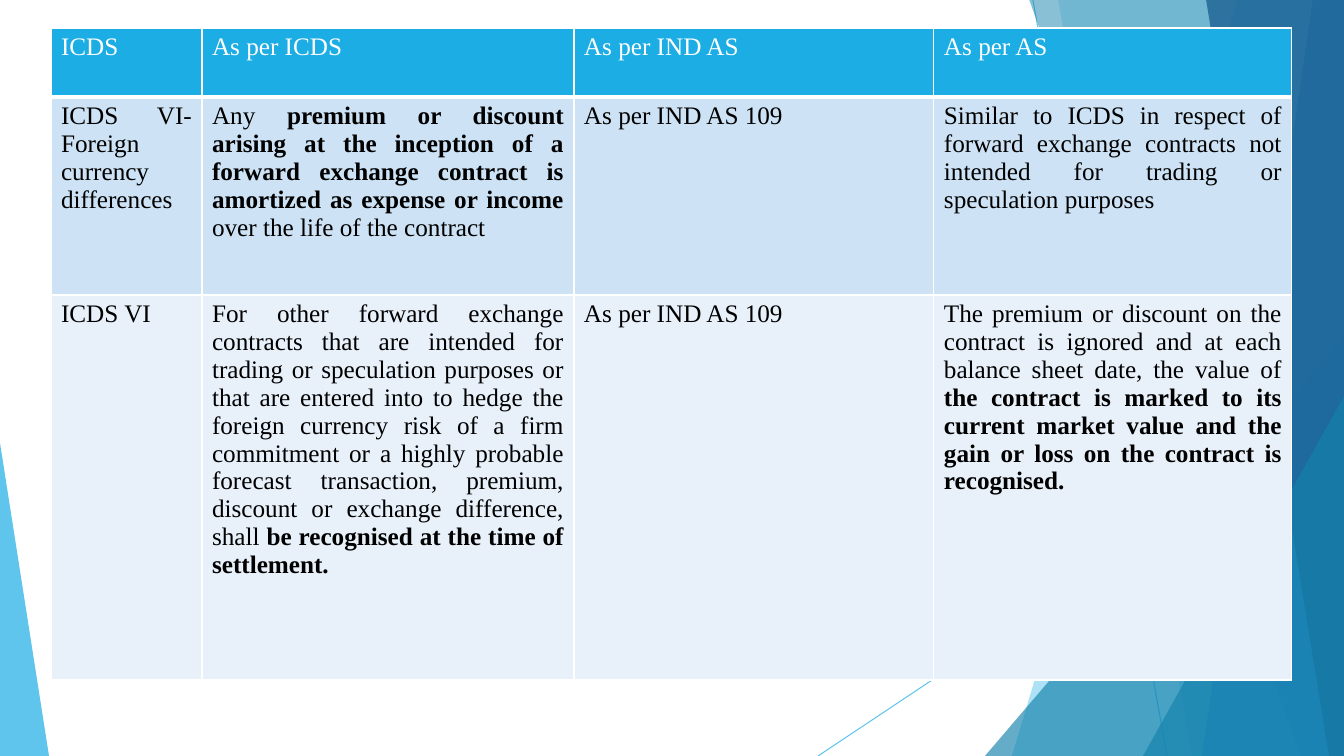
from lxml import etree
from pptx import Presentation, util as u
from pptx.dml.color import RGBColor
from pptx.enum import shapes, text
from pptx.oxml.ns import qn

PX = 914400 / 100.8
WIDTH, HEIGHT = 1344, 756
COLORS = {
    "sky": "1CADE4", "teal": "1482AC", "blue": "2683C6", "navy": "1D6294",
    "band": "CDE3F5", "pale": "E8F1FA", "white": "FFFFFF", "black": "000000",
}


def px(length):
    return u.Emu(round(length * PX))


def color(name):
    return RGBColor.from_string(COLORS[name])


def write(paragraph, words, size=18, font="Times New Roman", ink="black",
          align=text.PP_ALIGN.JUSTIFY):
    """Fill a paragraph; words between ** marks are bold."""
    paragraph.alignment = align
    for index, part in enumerate(words.split("**")):
        if part:
            run = paragraph.add_run()
            run.text = part
            run.font.name, run.font.size = font, u.Pt(size)
            run.font.bold = index % 2 == 1
            run.font.color.rgb = color(ink)


def set_alpha(fill_parent, percent):
    rgb = next(fill_parent.iter(qn("a:srgbClr")))
    etree.SubElement(rgb, qn("a:alpha"), val=str(percent * 1000))


class Deck:
    def __init__(self):
        self.prs = Presentation()
        self.prs.slide_width, self.prs.slide_height = px(WIDTH), px(HEIGHT)
        self.slide = self.prs.slides.add_slide(self.prs.slide_layouts[6])

    def line(self, x1, y1, x2, y2, ink="sky", alpha=70):
        connector = self.slide.shapes.add_connector(
            shapes.MSO_CONNECTOR.STRAIGHT, px(x1), px(y1), px(x2), px(y2))
        connector.line.width = u.Pt(0.75)
        connector.line.color.rgb = color(ink)
        properties = connector._element.spPr
        set_alpha(properties, alpha)
        etree.SubElement(properties, qn("a:effectLst"))

    def paint(self, shape, ink, alpha):
        shape.shadow.inherit = False
        shape.fill.solid()
        shape.fill.fore_color.rgb = color(ink)
        set_alpha(shape._element.spPr, alpha)
        shape.line.fill.background()

    def facet(self, top_x, bottom_x, ink, alpha):
        """Draw a full-height panel from a slanted left edge to the slide's right edge."""
        outline = self.slide.shapes.build_freeform(top_x, -1, scale=PX)
        outline.add_line_segments([(WIDTH, -1), (WIDTH, HEIGHT), (bottom_x, HEIGHT)])
        self.paint(outline.convert_to_shape(), ink, alpha)

    def triangle(self, left, width, height, apex, ink, alpha):
        """Draw a triangle standing on the slide's bottom edge."""
        shape = self.slide.shapes.add_shape(
            shapes.MSO_SHAPE.ISOSCELES_TRIANGLE,
            px(left), px(HEIGHT - height), px(width), px(height))
        shape.adjustments[0] = apex
        self.paint(shape, ink, alpha)

    def borders(self, cell, top=1, bottom=1):
        properties = cell._tc.get_or_add_tcPr()
        for side, points in (("L", 1), ("R", 1), ("T", top), ("B", bottom)):
            edge = etree.SubElement(properties, qn(f"a:ln{side}"), w=str(u.Pt(points)))
            fill = etree.SubElement(edge, qn("a:solidFill"))
            etree.SubElement(fill, qn("a:srgbClr"), val=COLORS["white"])

    def table(self, left, top, widths, heights, rows, fills):
        grid = self.slide.shapes.add_table(
            len(rows), len(widths), px(left), px(top),
            px(sum(widths)), px(sum(heights))).table
        grid.first_row = grid.horz_banding = False
        for column, width in zip(grid.columns, widths):
            column.width = px(width)
        for r, (row, height) in enumerate(zip(grid.rows, heights)):
            row.height = px(height)
            for cell, words in zip(row.cells, rows[r]):
                self.borders(cell, top=3 if r == 1 else 1, bottom=3 if r == 0 else 1)
                cell.fill.solid()
                cell.fill.fore_color.rgb = color(fills[r])
                write(cell.text_frame.paragraphs[0], words,
                      ink="white" if r == 0 else "black")


COMPARISON = [
    ["ICDS", "As per ICDS", "As per IND AS", "As per AS"],
    ["ICDS VI-Foreign currency differences",
     "Any **premium or discount arising at the inception of a forward exchange "
     "contract is amortized as expense or income** over the life of the contract",
     "As per IND AS 109",
     "Similar to ICDS in respect of forward exchange contracts not intended for "
     "trading or speculation purposes"],
    ["ICDS VI",
     "For other forward exchange contracts that are intended for trading or "
     "speculation purposes or that are entered into to hedge the foreign currency "
     "risk of a firm commitment or a highly probable forecast transaction, premium, "
     "discount or exchange difference, shall **be recognised at the time of "
     "settlement.**",
     "As per IND AS 109",
     "The premium or discount on the contract is ignored and at each balance sheet "
     "date, the value of **the contract is marked to its current market value and "
     "the gain or loss on the contract is recognised.**"],
]


def main():
    deck = Deck()
    deck.line(1033, 0, 1167, HEIGHT)
    deck.line(WIDTH, 406, 818, HEIGHT)
    deck.facet(1238, 1012, "sky", 36)
    deck.facet(1058, 1192, "sky", 20)
    deck.triangle(985, 359, 420, 1, "teal", 66)
    deck.facet(1029, 1301, "teal", 50)
    deck.facet(1313, 1202, "blue", 70)
    deck.facet(1206, 1329, "navy", 80)
    deck.triangle(1143, 201, 360, 1, "teal", 66)
    deck.triangle(0, 49, 313, 0, "sky", 70)
    deck.table(51, 28, [151, 372, 360, 358], [69, 198, 385],
               COMPARISON, ["sky", "band", "pale"])
    deck.prs.save("out.pptx")


if __name__ == "__main__":
    main()
